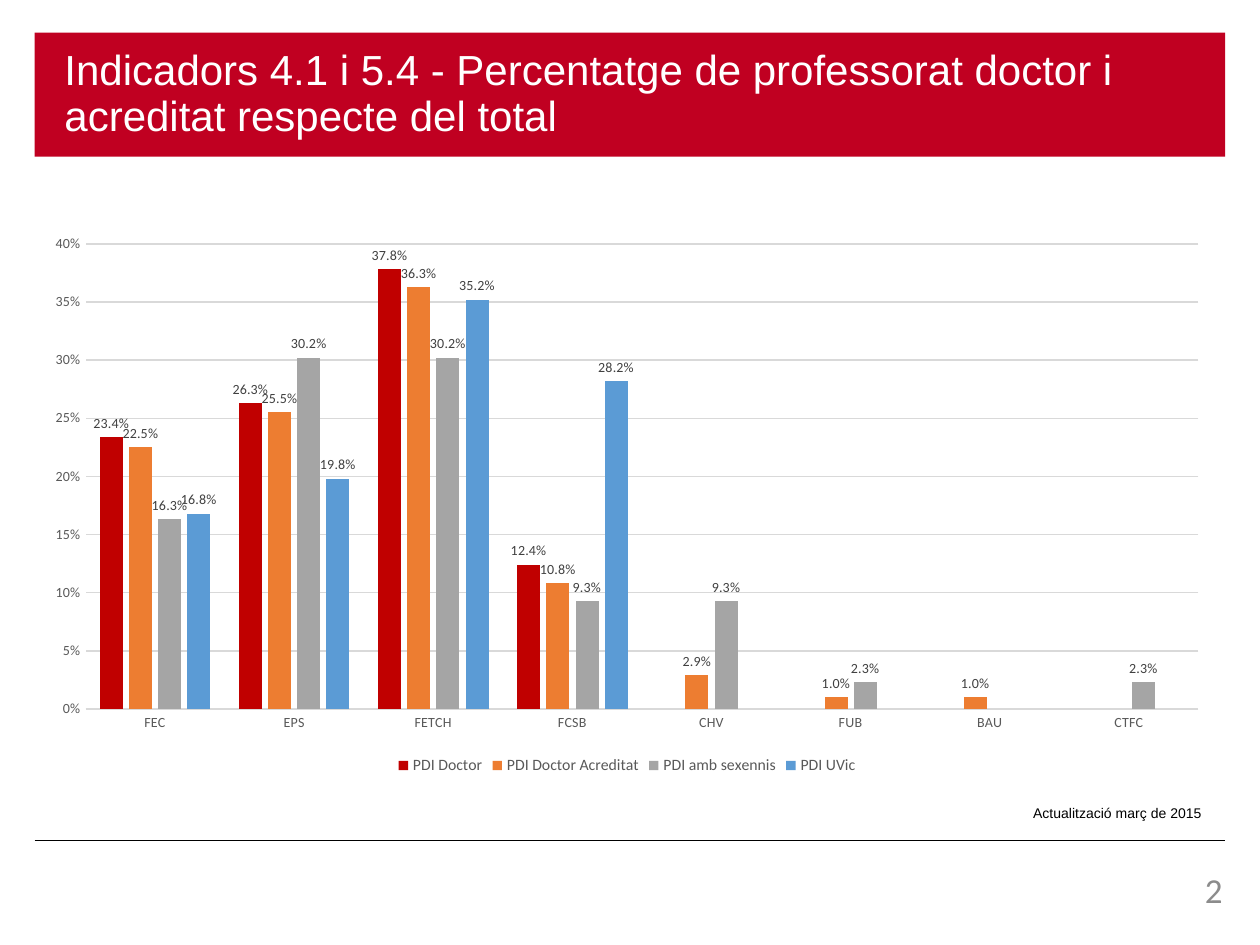
from lxml import etree
from pptx import Presentation
from pptx.chart.data import CategoryChartData
from pptx.dml.color import RGBColor
from pptx.enum.chart import XL_CHART_TYPE, XL_LABEL_POSITION, XL_LEGEND_POSITION, XL_TICK_MARK
from pptx.enum.shapes import MSO_CONNECTOR
from pptx.enum.text import MSO_ANCHOR, MSO_AUTO_SIZE, PP_ALIGN
from pptx.oxml.ns import qn
from pptx.util import Cm, Pt

COLUMNS = XL_CHART_TYPE.COLUMN_CLUSTERED
OUTSIDE = XL_LABEL_POSITION.OUTSIDE_END
BOTTOM = XL_LEGEND_POSITION.BOTTOM
NO_TICK = XL_TICK_MARK.NONE
STRAIGHT = MSO_CONNECTOR.STRAIGHT
MIDDLE, TOP = MSO_ANCHOR.MIDDLE, MSO_ANCHOR.TOP
LEFT, RIGHT = PP_ALIGN.LEFT, PP_ALIGN.RIGHT
NO_FIT = MSO_AUTO_SIZE.NONE

COLORS = {
    "red": "C00021", "white": "FFFFFF", "black": "000000",
    "number": "8C8C8C", "axis": "595959", "label": "404040", "grid": "D9D9D9",
}
SERIES = [
    ("PDI Doctor", "C00000", [0.234, 0.263, 0.378, 0.124, None, None, None, None]),
    ("PDI Doctor Acreditat", "ED7D31", [0.225, 0.255, 0.363, 0.108, 0.029, 0.01, 0.01, None]),
    ("PDI amb sexennis", "A5A5A5", [0.163, 0.302, 0.302, 0.093, 0.093, 0.023, None, 0.023]),
    ("PDI UVic", "5B9BD5", [0.168, 0.198, 0.352, 0.282, None, None, None, None]),
]


def style_font(font, size, color, name="Calibri"):
    font.size = Pt(size)
    font.name = name
    font.bold = False
    font.color.rgb = RGBColor.from_string(COLORS[color])


def write_text(box, text, size, color, name="Arial", align=LEFT, anchor=TOP,
               wrap=True, margins=(0.25, 0.13, 0.25, 0.13), spacing=None):
    """Fill a shape with one formatted paragraph; margins are left, top, right, bottom in cm."""
    frame = box.text_frame
    frame.auto_size = NO_FIT
    frame.word_wrap = wrap
    frame.vertical_anchor = anchor
    frame.margin_left, frame.margin_top, frame.margin_right, frame.margin_bottom = map(Cm, margins)
    para = frame.paragraphs[0]
    para.alignment = align
    para.line_spacing = spacing
    span = para.add_run()
    span.text = text
    style_font(span.font, size, color, name)


deck = Presentation()
deck.slide_width, deck.slide_height = Cm(25.4), Cm(19.05)
page = deck.slides.add_slide(deck.slide_layouts[5])

# Footer rule
rule = page.shapes.add_connector(STRAIGHT, Cm(0.7), Cm(16.94), Cm(24.7), Cm(16.94))
rule.line.color.rgb = RGBColor.from_string(COLORS["black"])
rule.line.width = Pt(0.5)
etree.SubElement(rule._element.spPr, qn("a:effectLst"))

# Title band
title = page.shapes.title
title.left, title.top, title.width, title.height = Cm(0.7), Cm(0.66), Cm(24), Cm(2.5)
title.fill.solid()
title.fill.fore_color.rgb = RGBColor.from_string(COLORS["red"])
write_text(title, "Indicadors 4.1 i 5.4 - Percentatge de professorat doctor i acreditat respecte del total",
           24, "white", anchor=MIDDLE, margins=(0.6, 0.13, 0.25, 0.13), spacing=0.9)

# Column chart
data = CategoryChartData(number_format="0.0%")
data.categories = ["FEC", "EPS", "FETCH", "FCSB", "CHV", "FUB", "BAU", "CTFC"]
for name, color, values in SERIES:
    data.add_series(name, values)
chart = page.shapes.add_chart(COLUMNS, Cm(0.64), Cm(4.52), Cm(24), Cm(11.2), data).chart
style_font(chart.font, 10, "black")
chart.has_title = False
chart.has_legend = True
chart.legend.position = BOTTOM
chart.legend.include_in_layout = False
style_font(chart.legend.font, 9, "axis")

plot = chart.plots[0]
plot.gap_width = 125
plot.overlap = -27
plot.vary_by_categories = False
for series, (name, color, values) in zip(plot.series, SERIES):
    series.format.fill.solid()
    series.format.fill.fore_color.rgb = RGBColor.from_string(color)
    series.invert_if_negative = False
    labels = series.data_labels
    labels.show_value = True
    labels.position = OUTSIDE
    labels.number_format = "0.0%"
    labels.number_format_is_linked = False
    style_font(labels.font, 8, "label")

category_axis, value_axis = chart.category_axis, chart.value_axis
for axis in (category_axis, value_axis):
    axis.major_tick_mark = axis.minor_tick_mark = NO_TICK
    style_font(axis.tick_labels.font, 8, "axis")
value_axis.minimum_scale, value_axis.maximum_scale, value_axis.major_unit = 0, 0.4, 0.05
value_axis.tick_labels.number_format = "0%"
value_axis.tick_labels.number_format_is_linked = False
value_axis.format.line.fill.background()
value_axis.has_major_gridlines = True
for line in (category_axis.format.line, value_axis.major_gridlines.format.line):
    line.color.rgb = RGBColor.from_string(COLORS["grid"])
    line.width = Pt(0.75)

# Update note and page number
note = page.shapes.add_textbox(Cm(20.52), Cm(16.08), Cm(3.96), Cm(0.6))
note.fill.solid()
note.fill.fore_color.rgb = RGBColor.from_string(COLORS["white"])
write_text(note, "Actualització març de 2015", 8, "black", align=RIGHT, wrap=False)

number = page.shapes.add_textbox(Cm(22.8), Cm(17.5), Cm(1.85), Cm(1.02))
write_text(number, "2", 20, "number", name="Calibri", align=RIGHT, margins=(0, 0, 0, 0))

deck.save("out.pptx")
